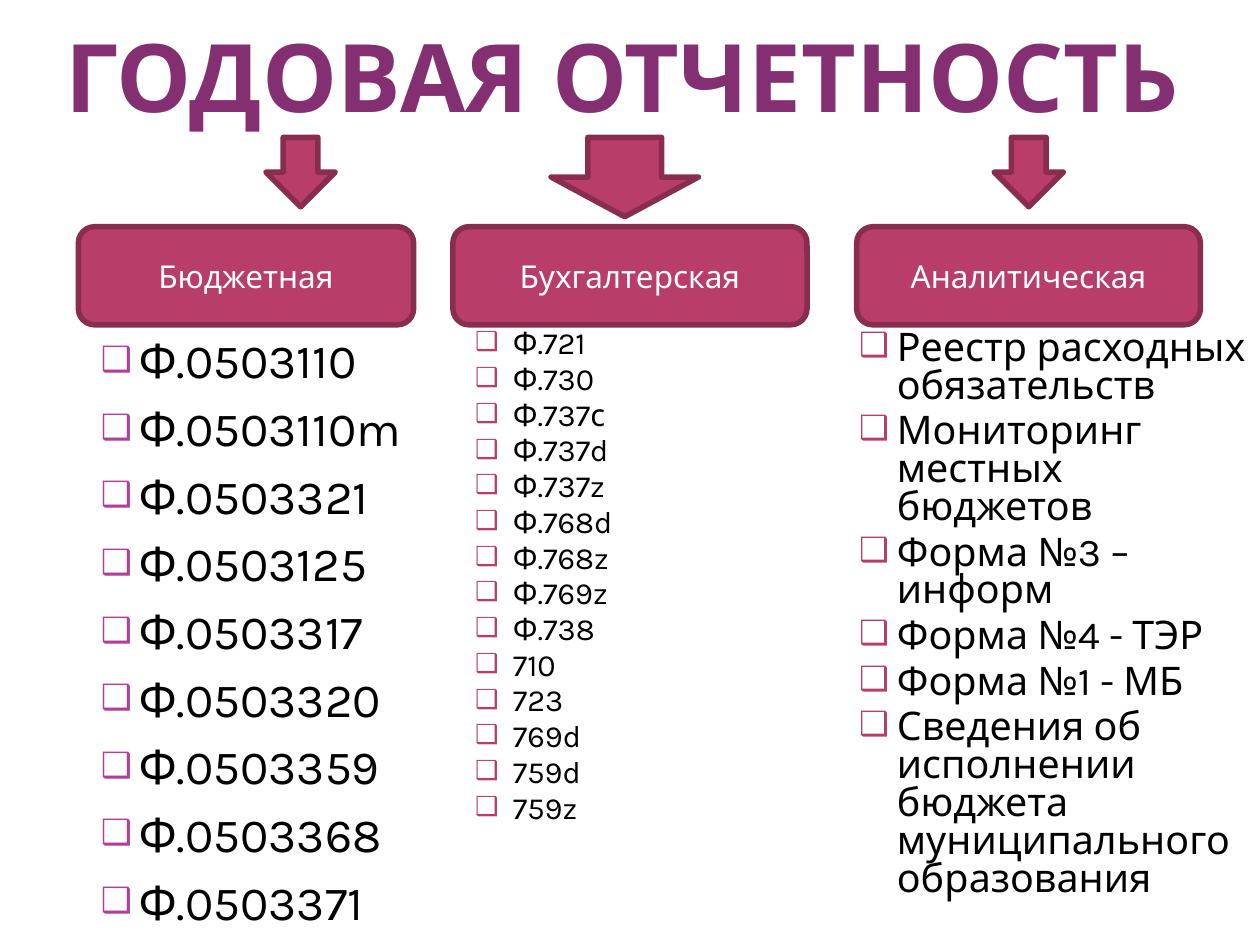
from lxml.etree import SubElement
from pptx import Presentation
from pptx.dml.color import RGBColor
from pptx.enum.shapes import MSO_SHAPE as Shape
from pptx.enum.text import MSO_ANCHOR as Anchor, MSO_AUTO_SIZE as AutoSize, PP_ALIGN as Align
from pptx.oxml.ns import qn
from pptx.util import Cm, Pt

FONT = "Karla"
FILL, OUTLINE = "B83D68", "882D4D"
CARD_TOP, CARD_HEIGHT = 4.57, 1.98
ARROW_TOP = 2.77
LIST_TOP = CARD_TOP + CARD_HEIGHT
INDENT = Cm(0.76)

TITLE = "ГОДОВАЯ ОТЧЕТНОСТЬ"
COLUMNS = [
    {
        "heading": "Бюджетная",
        "card": (1.58, 6.76), "arrow": (5.36, 1.4, 1.4), "list": (1.78, 6.76, 11.51),
        "size": 27.2, "before": 6, "spacing": 1.0, "bullet": ("B13F9A", 73),
        "items": ["Ф.0503110", "Ф.0503110m", "Ф.0503321", "Ф.0503125", "Ф.0503317",
                  "Ф.0503320", "Ф.0503359", "Ф.0503368", "Ф.0503371"],
    },
    {
        "heading": "Бухгалтерская",
        "card": (9.13, 7.14), "arrow": (11.11, 2.97, 1.6), "list": (9.33, 6.76, 11.18),
        "size": 17.6, "before": 3.52, "spacing": 0.8, "bullet": (FILL, 85),
        "items": ["Ф.721", "Ф.730", "Ф.737с", "Ф.737d", "Ф.737z", "Ф.768d", "Ф.768z",
                  "Ф.769z", "Ф.738", "710", "723", "769d", "759d", "759z"],
    },
    {
        "heading": "Аналитическая",
        "card": (17.27, 6.93), "arrow": (20.04, 1.4, 1.4), "list": (17.07, 8.33, 11.51),
        "size": 22.5, "before": 4.5, "spacing": 0.8, "bullet": (FILL, 85),
        "items": ["Реестр расходных обязательств", "Мониторинг местных бюджетов",
                  "Форма №3 – информ", "Форма №4 - ТЭР", "Форма №1 - МБ",
                  "Сведения об исполнении бюджета муниципального образования"],
    },
]


def paint(color_format, color):
    color_format.rgb = RGBColor.from_string(color)


def set_font(paragraph, size, color, bold=False):
    font = paragraph.font
    font.name, font.size, font.bold = FONT, Pt(size), bold
    paint(font.color, color)


def place(shape, left, top, width, height):
    shape.left, shape.top, shape.width, shape.height = map(Cm, (left, top, width, height))


def add_bullet(paragraph, color, percent):
    properties = paragraph._p.get_or_add_pPr()
    properties.set("marL", str(INDENT))
    properties.set("indent", str(-INDENT))
    bullet_color = SubElement(properties, qn("a:buClr"))
    SubElement(bullet_color, qn("a:srgbClr"), val=color)
    SubElement(properties, qn("a:buSzPct"), val=str(percent * 1000))
    SubElement(properties, qn("a:buFont"), typeface=FONT)
    SubElement(properties, qn("a:buChar"), char="❑")


def add_block(slide, kind, left, top, width, height):
    shape = slide.shapes.add_shape(kind, *map(Cm, (left, top, width, height)))
    shape.shadow.inherit = False
    shape.fill.solid()
    paint(shape.fill.fore_color, FILL)
    paint(shape.line.color, OUTLINE)
    shape.line.width = Pt(3.15)
    return shape


def add_card(slide, column):
    left, width = column["card"]
    card = add_block(slide, Shape.ROUNDED_RECTANGLE, left, CARD_TOP, width, CARD_HEIGHT)
    card.text_frame.vertical_anchor = Anchor.MIDDLE
    paragraph = card.text_frame.paragraphs[0]
    paragraph.text = column["heading"]
    paragraph.alignment = Align.CENTER
    set_font(paragraph, 18, "FFFFFF")


def fill_list(shape, column):
    left, width, height = column["list"]
    place(shape, left, LIST_TOP, width, height)
    frame = shape.text_frame
    frame.word_wrap = True
    frame.auto_size = AutoSize.NONE
    frame.vertical_anchor = Anchor.TOP
    for index, item in enumerate(column["items"]):
        paragraph = frame.add_paragraph() if index else frame.paragraphs[0]
        paragraph.text = item
        add_bullet(paragraph, *column["bullet"])
        paragraph.line_spacing = column["spacing"]
        paragraph.space_before = Pt(column["before"] if index else 0)
        set_font(paragraph, column["size"], "000000")


def fill_title(shape):
    place(shape, 1.19, 0.99, 22.73, 1.65)
    frame = shape.text_frame
    frame.word_wrap = True
    frame.auto_size = AutoSize.NONE
    frame.vertical_anchor = Anchor.BOTTOM
    frame.margin_left = frame.margin_right = Cm(0.13)
    frame.margin_top = frame.margin_bottom = 0
    paragraph = frame.paragraphs[0]
    paragraph.text = TITLE
    paragraph.alignment = Align.LEFT
    set_font(paragraph, 54, "852F73", bold=True)


def main():
    presentation = Presentation()
    presentation.slide_width, presentation.slide_height = Cm(25.4), Cm(19.05)
    slide = presentation.slides.add_slide(presentation.slide_layouts[1])
    fill_title(slide.shapes.title)
    body = slide.placeholders[1]
    for index, column in enumerate(COLUMNS):
        add_card(slide, column)
        left, width, height = column["arrow"]
        add_block(slide, Shape.DOWN_ARROW, left, ARROW_TOP, width, height)
        box = slide.shapes.add_textbox(0, 0, 0, 0) if index else body
        fill_list(box, column)
    presentation.save("out.pptx")


if __name__ == "__main__":
    main()
